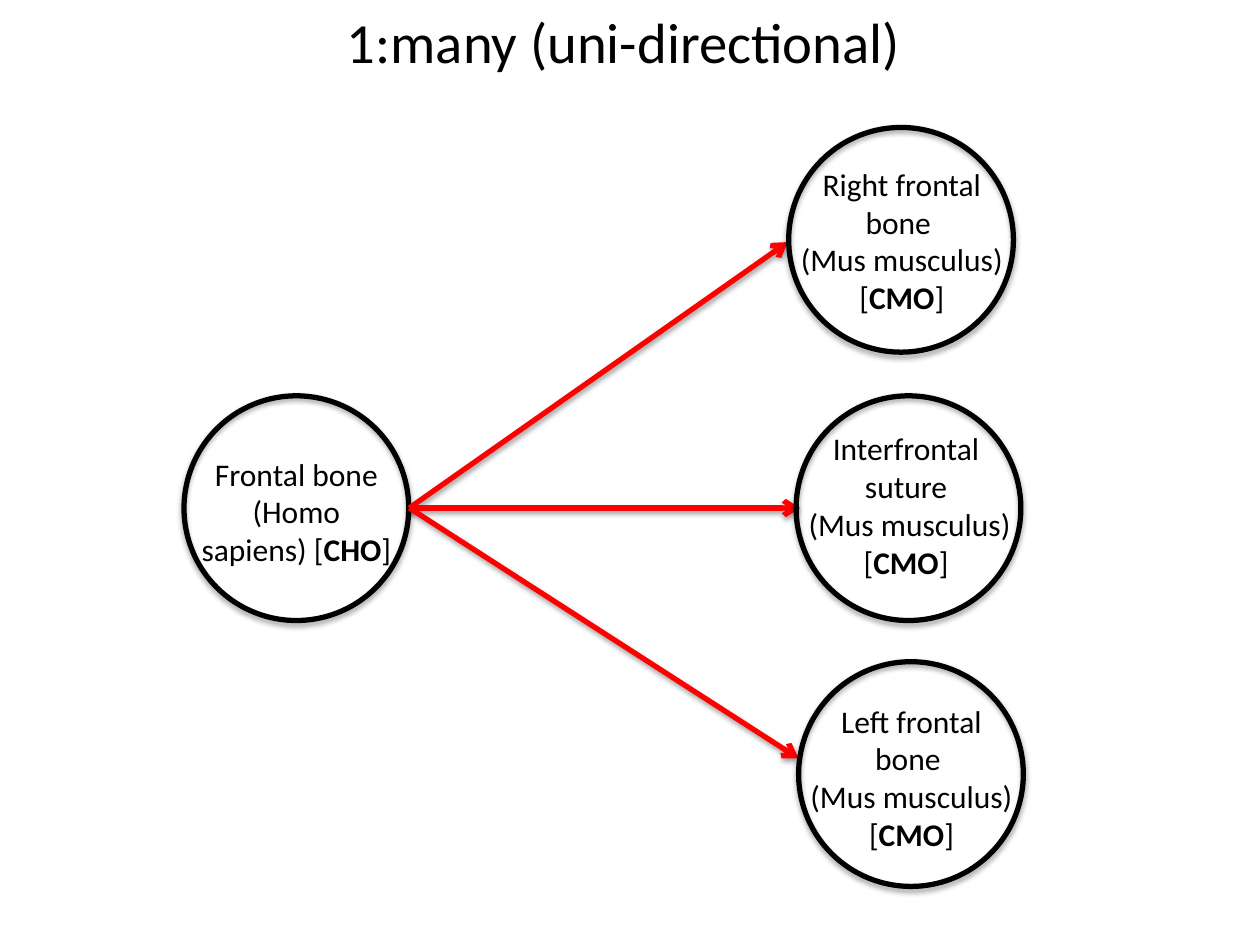
from pptx import Presentation
from pptx.dml.color import RGBColor
from pptx.enum.shapes import MSO_CONNECTOR, MSO_SHAPE
from pptx.enum.text import MSO_ANCHOR, MSO_AUTO_SIZE, PP_ALIGN
from pptx.oxml import parse_xml
from pptx.oxml.ns import nsdecls, qn
from pptx.util import Cm, Pt

ELLIPSE = MSO_SHAPE.OVAL
STRAIGHT = MSO_CONNECTOR.STRAIGHT
CENTER = PP_ALIGN.CENTER
MIDDLE = MSO_ANCHOR.MIDDLE
GROW = MSO_AUTO_SIZE.SHAPE_TO_FIT_TEXT

COLORS = {"ink": "000000", "relation": "FF0000"}
FONT = "Calibri"
DIAMETER = 4.53
HUB = (8.25, 10.24)

# Circle left and top; label left, top, width and height; label paragraphs,
# each a list of (text, bold) runs. Lengths in cm.
HUMAN_BONE = (
    (3.71, 7.98), (3.71, 9.04, 4.53, 2.57),
    [[("Frontal bone (Homo sapiens) [", False), ("CHO", True), ("]", False)]],
)


def mouse_label(bone, species="(Mus musculus) ["):
    return [[(bone, False)], [(species, False), ("CMO", True), ("]", False)]]


MOUSE_BONES = [
    ((15.9, 2.57), (15.88, 3.2, 4.6, 3.33), mouse_label("Right frontal bone ")),
    ((16.05, 7.98), (15.85, 8.53, 4.83, 3.33),
     mouse_label("Interfrontal suture", " (Mus musculus) [")),
    ((16.1, 13.34), (16.0, 14.02, 4.75, 3.33), mouse_label("Left frontal bone ")),
]
ARROW_ENDS = [(15.88, 4.88), (16.13, 10.24), (16.1, 15.29)]


def color(name):
    return RGBColor.from_string(COLORS[name])


def format_text(paragraph, size):
    paragraph.alignment = CENTER
    paragraph.font.name = FONT
    paragraph.font.size = Pt(size)
    paragraph.font.color.rgb = color("ink")


def add_shadow(shape, distance, opacity):
    """Cast a soft shadow straight down; distance in points, opacity in percent."""
    shape._element.spPr.append(parse_xml(
        f'<a:effectLst {nsdecls("a")}>'
        f'<a:outerShdw blurRad="{Pt(3.1)}" dist="{Pt(distance)}" dir="5400000" rotWithShape="0">'
        f'<a:srgbClr val="{COLORS["ink"]}"><a:alpha val="{opacity * 1000}"/></a:srgbClr>'
        '</a:outerShdw></a:effectLst>'))


def add_title(slide, wording):
    title = slide.shapes.title
    title.left, title.top, title.width, title.height = Cm(1.14), Cm(0), Cm(22.86), Cm(1.65)
    title.text_frame.text = wording
    title.text_frame.vertical_anchor = MIDDLE
    format_text(title.text_frame.paragraphs[0], 32.4)


def add_bone(slide, corner, label_box, paragraphs):
    """Group a circle with the label that lies over it."""
    bone = slide.shapes.add_group_shape()
    circle = bone.shapes.add_shape(ELLIPSE, *map(Cm, corner), Cm(DIAMETER), Cm(DIAMETER))
    circle.fill.background()
    circle.line.color.rgb = color("ink")
    circle.line.width = Pt(3)
    add_shadow(circle, 1.8, 35)

    frame = bone.shapes.add_textbox(*map(Cm, label_box)).text_frame
    frame.word_wrap = True
    frame.auto_size = GROW
    for index, runs in enumerate(paragraphs):
        paragraph = frame.add_paragraph() if index else frame.paragraphs[0]
        format_text(paragraph, 18)
        for wording, bold in runs:
            run = paragraph.add_run()
            run.text = wording
            run.font.bold = bold


def add_arrow(slide, start, end):
    arrow = slide.shapes.add_connector(STRAIGHT, *map(Cm, start + end))
    arrow.line.color.rgb = color("relation")
    arrow.line.width = Pt(3)
    outline = arrow._element.spPr.find(qn("a:ln"))
    outline.append(parse_xml(f'<a:tailEnd {nsdecls("a")} type="arrow"/>'))
    add_shadow(arrow, 1.6, 38)


def main():
    presentation = Presentation()
    presentation.slide_width, presentation.slide_height = Cm(25.4), Cm(19.05)
    slide = presentation.slides.add_slide(presentation.slide_layouts[5])
    add_title(slide, "1:many (uni-directional)")
    add_bone(slide, *HUMAN_BONE)
    for end in ARROW_ENDS:
        add_arrow(slide, HUB, end)
    for mouse_bone in MOUSE_BONES:
        add_bone(slide, *mouse_bone)
    presentation.save("out.pptx")


if __name__ == "__main__":
    main()
